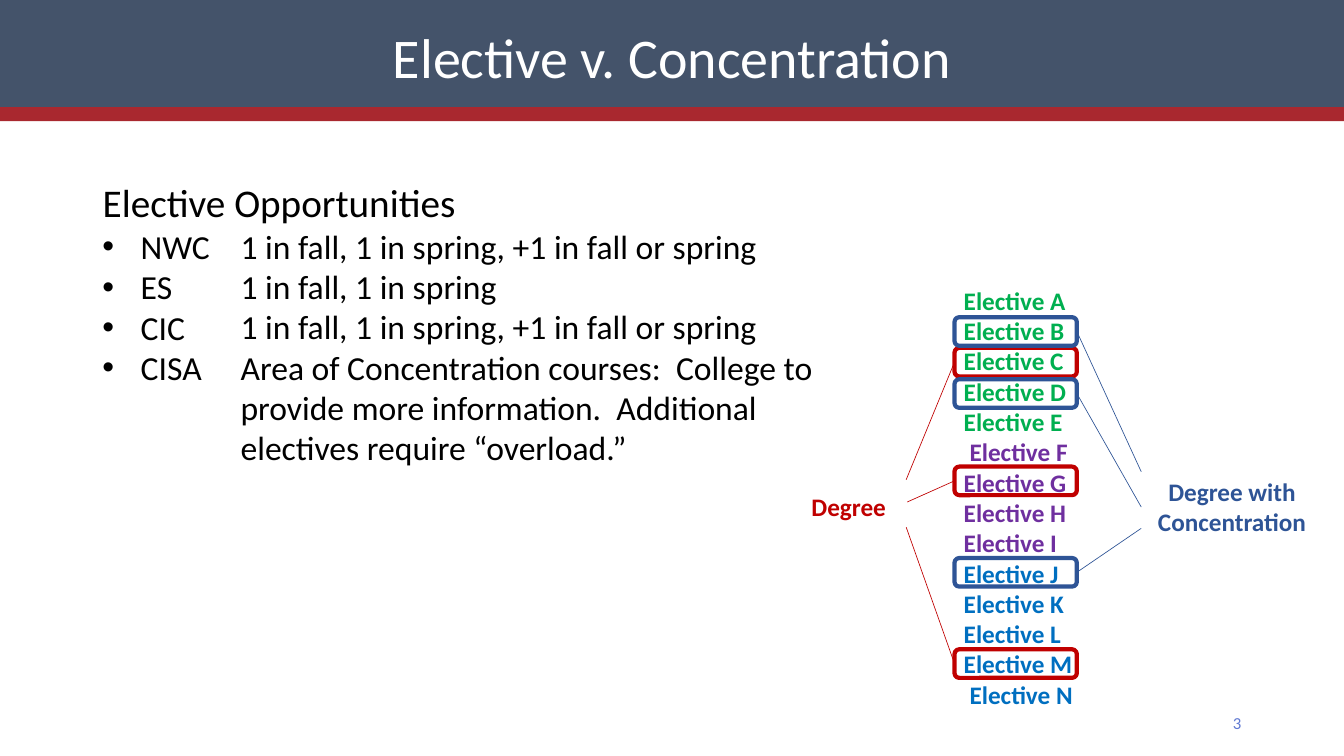
import pptx
import pptx.dml.color
import pptx.enum.shapes
import pptx.enum.text
import pptx.oxml.ns
import pptx.util
from lxml import etree

Pt = pptx.util.Pt
RGBColor = pptx.dml.color.RGBColor
SHAPE = pptx.enum.shapes.MSO_SHAPE
ALIGN = pptx.enum.text.PP_ALIGN

SLATE = RGBColor(0x44, 0x53, 0x6A)
CRIMSON = RGBColor(0xA9, 0x28, 0x2F)
WHITE = RGBColor(0xFF, 0xFF, 0xFF)
BLACK = RGBColor(0x00, 0x00, 0x00)
GREEN = RGBColor(0x00, 0xAF, 0x50)
PURPLE = RGBColor(0x6F, 0x2F, 0x9F)
BLUE = RGBColor(0x00, 0x6F, 0xC0)
RED = RGBColor(0xC0, 0x00, 0x00)
NAVY = RGBColor(0x2E, 0x54, 0x96)
PERIWINKLE = RGBColor(0x60, 0x79, 0xD2)

BODY = {"size": Pt(24)}
LABEL = {"size": Pt(18), "bold": True}

PROGRAMS = ["NWC", "ES", "CIC", "CISA"]
OPPORTUNITIES = [
    "1 in fall, 1 in spring, +1 in fall or spring",
    "1 in fall, 1 in spring",
    "1 in fall, 1 in spring, +1 in fall or spring",
    "Area of Concentration courses:  College to provide more information.  "
    "Additional electives require “overload.”",
]
ELECTIVE_GROUPS = [("ABCDE", GREEN), ("FGHI", PURPLE), ("JKLMN", BLUE)]
INDENTED_ELECTIVES = "FN"

# Frames: top of the frame, then the far end of its line
FRAME_LEFT, FRAME_WIDTH, FRAME_HEIGHT = 681.8, 87.4, 20.4
DEGREE_PICKS = [
    (248.5, 647.3, 342.6),   # C
    (333.3, 648, 358.6),     # G
    (463.8, 647.3, 376.6),   # M
]
CONCENTRATION_PICKS = [
    (226.6, 815.2, 337),     # B
    (270.9, 815.2, 362.2),   # D
    (398.6, 815.2, 377.4),   # J
]


def set_format(target, values):
    for name, value in values.items():
        setattr(target, name, value)


def add_bar(s, top, height, color):
    sp = s.shapes.add_shape(SHAPE.RECTANGLE, 0, Pt(top), Pt(960), Pt(height))
    sp.shadow.inherit = False
    sp.fill.solid()
    sp.fill.fore_color.rgb = color
    sp.line.fill.background()


def add_bullet(p, indent):
    pPr = p._p.get_or_add_pPr()
    pPr.set("marL", str(Pt(indent)))
    pPr.set("indent", str(-Pt(indent)))
    qn = pptx.oxml.ns.qn
    etree.SubElement(pPr, qn("a:buFont")).set("typeface", "Arial")
    etree.SubElement(pPr, qn("a:buChar")).set("char", "•")


def add_text(s, box, lines, color, font, paragraph=None, bullet=0):
    """Adds one paragraph for each line and returns the paragraphs."""
    tf = s.shapes.add_textbox(*map(Pt, box)).text_frame
    set_format(tf, {"word_wrap": True, "margin_left": 0, "margin_top": 0,
                    "margin_right": 0, "margin_bottom": 0})
    for i, line in enumerate(lines):
        p = tf.add_paragraph() if i else tf.paragraphs[0]
        set_format(p, paragraph or {})
        if bullet:
            add_bullet(p, bullet)
        r = p.add_run()
        r.text = line
        set_format(r.font, {"name": "Calibri", **font})
        r.font.color.rgb = color
    return tf.paragraphs


def add_electives(s):
    electives = [(letter, color) for letters, color in ELECTIVE_GROUPS
                 for letter in letters]
    lines = [f"Elective {letter}" for letter, _ in electives]
    paragraphs = add_text(s, (688.4, 203.5, 90, 304), lines, BLACK, LABEL,
                          {"line_spacing": Pt(21.65)})
    for p, (letter, color) in zip(paragraphs, electives):
        p.runs[0].font.color.rgb = color
        if letter in INDENTED_ELECTIVES:
            p._p.get_or_add_pPr().set("marL", str(Pt(4.2)))


def add_pick(s, top, end_x, end_y, color, side):
    """Frames an elective and joins the frame's side to its label."""
    sp = s.shapes.add_shape(SHAPE.ROUNDED_RECTANGLE, Pt(FRAME_LEFT), Pt(top),
                            Pt(FRAME_WIDTH), Pt(FRAME_HEIGHT))
    sp.shadow.inherit = False
    sp.fill.background()
    line = s.shapes.add_connector(pptx.enum.shapes.MSO_CONNECTOR.STRAIGHT,
                                  0, 0, Pt(end_x), Pt(end_y))
    line.begin_connect(sp, side)
    etree.SubElement(line._element.spPr, pptx.oxml.ns.qn("a:effectLst"))
    for shape, width in ((sp, 3), (line, 0.48)):
        shape.line.color.rgb = color
        shape.line.width = Pt(width)


def main():
    prs = pptx.Presentation()
    set_format(prs, {"slide_width": Pt(960), "slide_height": Pt(540)})
    s = prs.slides.add_slide(prs.slide_layouts[6])

    # Title band
    add_bar(s, 0, 77, SLATE)
    add_bar(s, 76.5, 10, CRIMSON)
    add_text(s, (120, 16.2, 720, 49), ["Elective v. Concentration"], WHITE,
             {"size": Pt(40)}, {"alignment": ALIGN.CENTER})

    # Opportunities by college
    add_text(s, (73.4, 127.6, 280, 35), ["Elective Opportunities"], BLACK,
             {"size": Pt(28)})
    spacing = {"line_spacing": Pt(28.8)}
    add_text(s, (73.1, 161.5, 90, 116), PROGRAMS, BLACK, BODY, spacing, 27.4)
    add_text(s, (171.9, 161.2, 415, 174), OPPORTUNITIES, BLACK, BODY, spacing)

    # Electives and the two routes through them
    add_electives(s)
    for pick in DEGREE_PICKS:
        add_pick(s, *pick, RED, 1)
    for pick in CONCENTRATION_PICKS:
        add_pick(s, *pick, NAVY, 3)
    add_text(s, (579.6, 351, 60, 22), ["Degree"], RED, LABEL)
    add_text(s, (825, 340.2, 110, 44), ["Degree with Concentration"], NAVY,
             LABEL, {"alignment": ALIGN.CENTER})

    # Slide number
    add_text(s, (880.6, 508.8, 10, 14), ["3"], PERIWINKLE, {"size": Pt(12)})

    prs.save("out.pptx")


if __name__ == "__main__":
    main()
